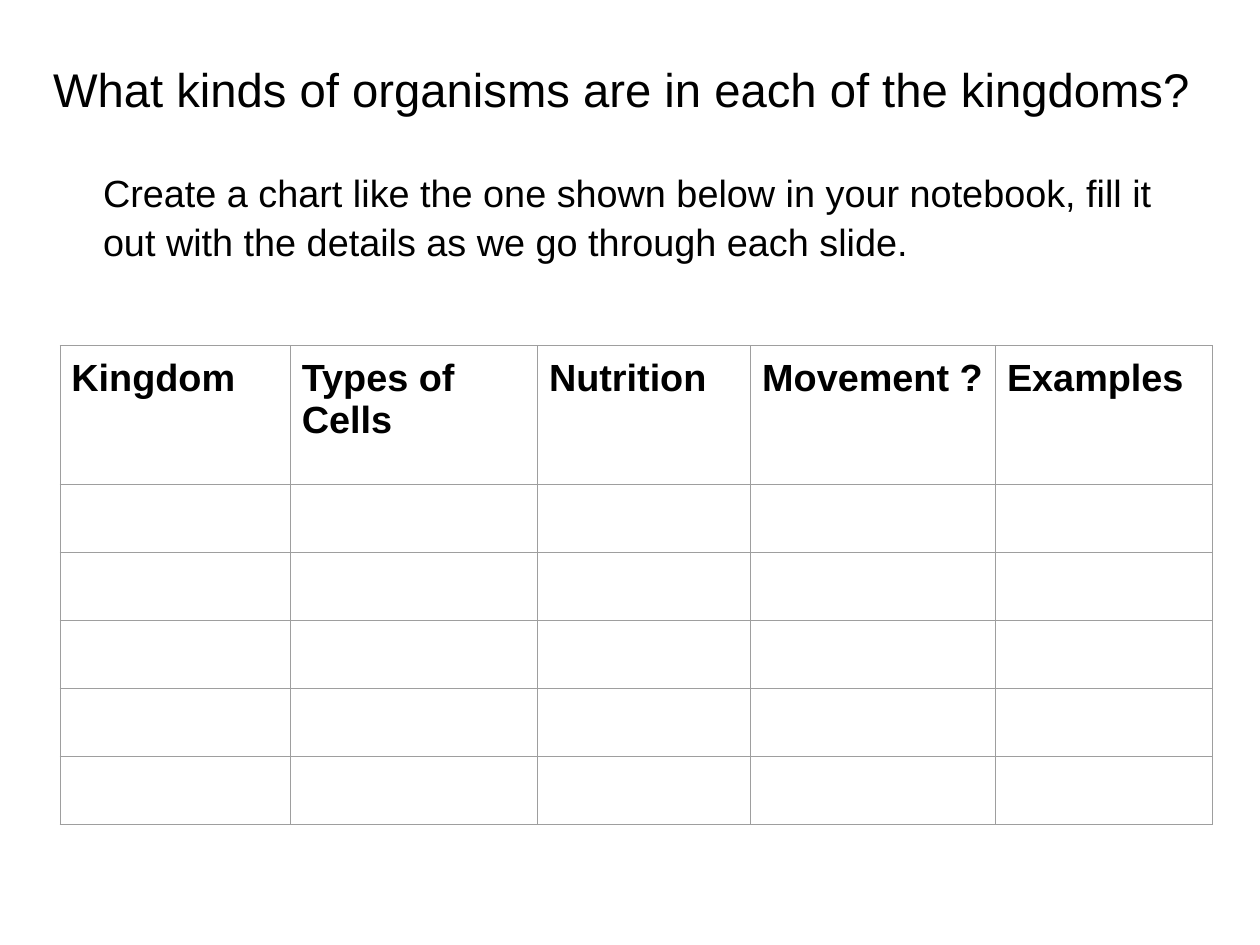
from lxml.etree import fromstring
from pptx import Presentation
from pptx.dml.color import RGBColor
from pptx.oxml.ns import nsdecls
from pptx.util import Inches, Pt

WIDTH, HEIGHT = Inches(11.11), Inches(8.33)
INSET = Inches(0.1)
FONT, INK, RULE = "Arial", "000000", "9E9E9E"
RULE_WIDTH = Pt(0.75)

TITLE_BOX = (3.33, 4.8, 94.24, 12.97)
TASK_BOX = (7.29, 16.45, 86.32, 11.88)
CHART_BOX = (4.77, 36.61, 91.45, 50.66)
COLUMN_SHARES = (20, 21.45, 18.5, 21.25, 18.8)
HEADER_SHARE, BLANK_ROWS = 28.9, 5
HEADINGS = ("Kingdom", "Types of Cells", "Nutrition", "Movement ?", "Examples")


def color(value):
    """Turn a hex string into a colour."""
    return RGBColor.from_string(value)


def place(box):
    """Turn percentages of the slide into left, top, width and height."""
    sides = (WIDTH, HEIGHT, WIDTH, HEIGHT)
    return [round(side * share / 100) for side, share in zip(sides, box)]


def set_margins(target):
    """Give a text frame or table cell the common inset."""
    target.margin_left = target.margin_right = INSET
    target.margin_top = target.margin_bottom = INSET


def add_run(paragraph, text, size, bold=False):
    """Add one styled run to a paragraph."""
    run = paragraph.add_run()
    run.text = text
    run.font.name, run.font.size, run.font.bold = FONT, Pt(size), bold
    run.font.color.rgb = color(INK)


def add_text(slide, box, text, size):
    """Place a wrapped text box in the given box."""
    frame = slide.shapes.add_textbox(*place(box)).text_frame
    frame.word_wrap = True
    set_margins(frame)
    paragraph = frame.paragraphs[0]
    paragraph.line_spacing = 1.07
    add_run(paragraph, text, size)


def style_cell(cell):
    """Clear a cell's fill and rule all four sides."""
    set_margins(cell)
    cell.fill.background()
    properties = cell._tc.get_or_add_tcPr()
    for index, side in enumerate("LRTB"):
        properties.insert(index, fromstring(
            f'<a:ln{side} {nsdecls("a")} w="{RULE_WIDTH}"><a:solidFill>'
            f'<a:srgbClr val="{RULE}"/></a:solidFill></a:ln{side}>'))


def add_kingdom_chart(slide, box):
    """Place the table with its headings and blank rows in the given box."""
    left, top, width, height = place(box)
    table = slide.shapes.add_table(
        BLANK_ROWS + 1, len(HEADINGS), left, top, width, height).table
    table.first_row = table.horz_banding = False
    for column, share in zip(table.columns, COLUMN_SHARES):
        column.width = round(width * share / 100)
    header_height = round(height * HEADER_SHARE / 100)
    for row in table.rows:
        row.height = round((height - header_height) / BLANK_ROWS)
    table.rows[0].height = header_height
    for cell in table.iter_cells():
        style_cell(cell)
    for cell, heading in zip(table.rows[0].cells, HEADINGS):
        add_run(cell.text_frame.paragraphs[0], heading, 24, bold=True)


def main():
    """Build and save the slide."""
    presentation = Presentation()
    presentation.slide_width, presentation.slide_height = WIDTH, HEIGHT
    slide = presentation.slides.add_slide(presentation.slide_layouts[6])
    slide.background.fill.solid()
    slide.background.fill.fore_color.rgb = color("FFFFFF")
    add_text(slide, TITLE_BOX,
             "What kinds of organisms are in each of the kingdoms?", 30)
    add_text(slide, TASK_BOX,
             "Create a chart like the one shown below in your notebook, "
             "fill it out with the details as we go through each slide.", 24)
    add_kingdom_chart(slide, CHART_BOX)
    presentation.save("out.pptx")


if __name__ == "__main__":
    main()
